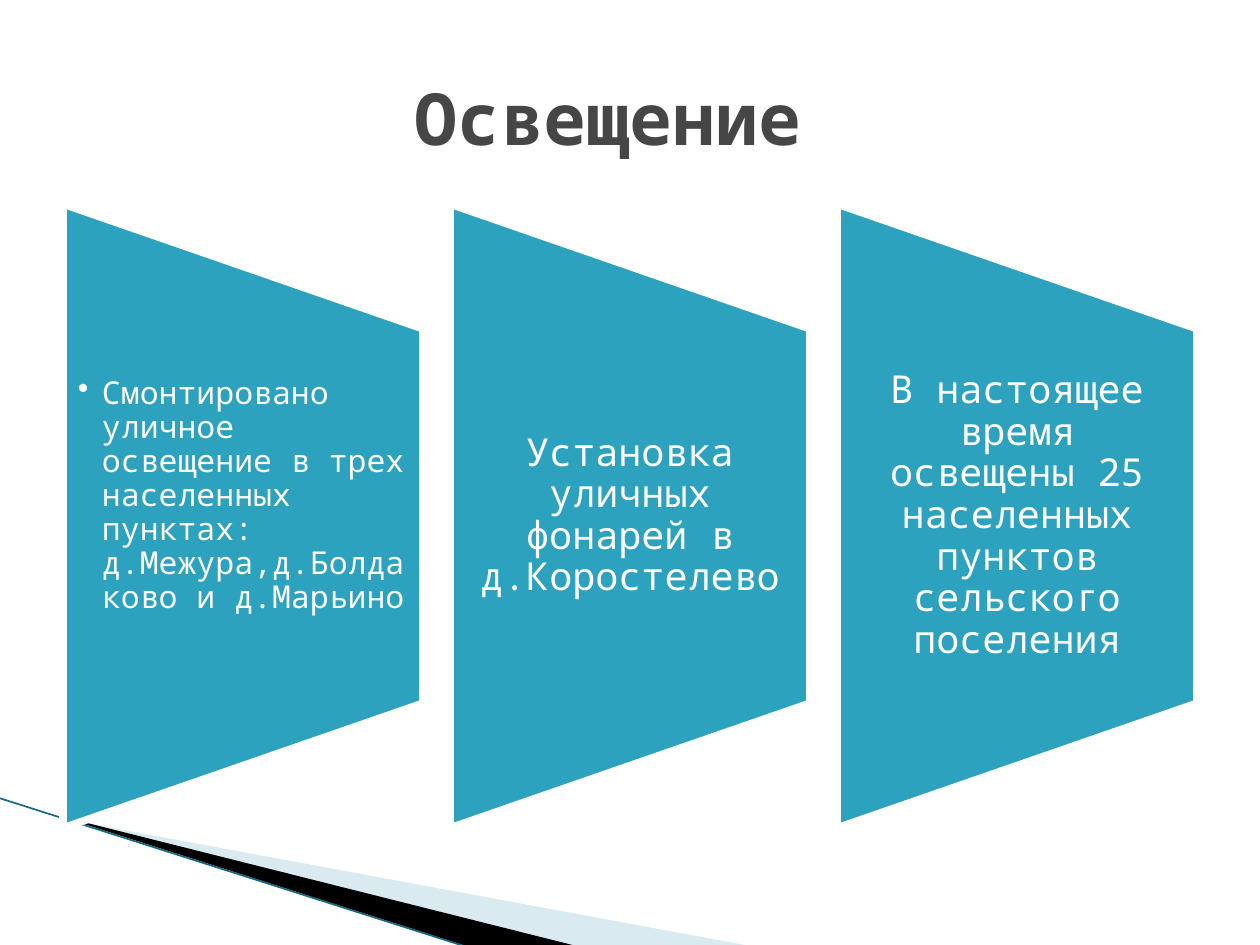
import pptx
import pptx.dml.color
import pptx.enum.shapes
import pptx.enum.text
import pptx.oxml
import pptx.oxml.ns
import pptx.util
from lxml import etree

RGB = pptx.dml.color.RGBColor
TEAL = RGB(0x2D, 0xA2, 0xBF)
DEEP = RGB(0x14, 0x6B, 0x80)
PALE = RGB(0xA0, 0xCB, 0xDC)
BLACK = RGB(0, 0, 0)
WHITE = RGB(0xFF, 0xFF, 0xFF)
GREY = RGB(0x46, 0x46, 0x46)
FONT = "Noto Sans Mono"
SCALE = 914400 / 126
ALIGN = pptx.enum.text.PP_ALIGN
MIDDLE = pptx.enum.text.MSO_ANCHOR.MIDDLE
TOP = pptx.enum.text.MSO_ANCHOR.TOP


def px(*vals):
    return [pptx.util.Emu(round(v * SCALE)) for v in vals]


def write(box, text, size=22, color=WHITE, bold=False, align=ALIGN.CENTER,
          anchor=MIDDLE, inset=None, space=None, bullet=False):
    frame = box.text_frame
    frame.word_wrap = True
    frame.auto_size = pptx.enum.text.MSO_AUTO_SIZE.NONE
    frame.vertical_anchor = anchor
    if inset is not None:
        frame.margin_left, frame.margin_right = px(inset, inset)
        frame.margin_top = frame.margin_bottom = 0
    para = frame.paragraphs[0]
    para.alignment = align
    if space:
        para.line_spacing = space
    if bullet:
        props = para._p.get_or_add_pPr()
        props.set("marL", str(px(24)[0]))
        props.set("indent", str(px(-24)[0]))
        etree.SubElement(props, pptx.oxml.ns.qn("a:buChar"), char="•")
    run = para.add_run()
    run.text = text
    font = run.font
    font.name, font.size, font.bold = FONT, pptx.util.Pt(size), bold
    font.color.rgb = color


deck = pptx.Presentation()
deck.slide_width, deck.slide_height = px(1260, 945)
slide = deck.slides.add_slide(deck.slide_layouts[5])
shapes = slide.shapes

# Corner wedges
wedges = [
    ([(69, 820), (750, 946), (575, 946), (69, 819)], PALE, 40),
    ([(67, 818), (576, 946), (469, 947), (68, 819)], BLACK, 100),
]
for pts, color, alpha in wedges:
    form = shapes.build_freeform(*pts[0], scale=SCALE)
    form.add_line_segments(pts[1:], close=True)
    wedge = form.convert_to_shape()
    wedge.shadow.inherit = False
    wedge.fill.solid()
    wedge.fill.fore_color.rgb = color
    wedge.line.fill.background()
    if alpha < 100:
        tint = wedge._element.spPr.find(".//" + pptx.oxml.ns.qn("a:srgbClr"))
        etree.SubElement(tint, pptx.oxml.ns.qn("a:alpha"), val=str(alpha * 1000))

# Corner line
edge = shapes.add_connector(pptx.enum.shapes.MSO_CONNECTOR.STRAIGHT,
                            *px(-1, 798, 467, 947))
edge.line.color.rgb = DEEP
edge.line.width = pptx.util.Pt(0.95)
etree.SubElement(edge._element.spPr, pptx.oxml.ns.qn("a:effectLst"))

# Three panels, each a trapezoid turned on its side with text over it
panels = [
    ("Смонтировано уличное освещение в трех населенных пунктах: "
     "д.Межура,д.Болдаково и д.Марьино",
     377, 326, dict(size=18, align=ALIGN.LEFT, anchor=TOP, inset=15, bullet=True)),
    ("Установка уличных фонарей в д.Коростелево ", 329, 374, dict(inset=19)),
    ("В настоящее время освещены 25 населенных пунктов сельского поселения",
     329, 374, dict(inset=19)),
]
wide, high, pitch = 624, 360, 387
for i, (text, top, tall, style) in enumerate(panels):
    left = 63 + i * pitch
    panel = shapes.add_shape(
        pptx.enum.shapes.MSO_SHAPE.FLOWCHART_MANUAL_OPERATION,
        *px(left + (high - wide) / 2, 336, wide, high))
    panel.rotation = 270
    panel.shadow.inherit = False
    panel.fill.solid()
    panel.fill.fore_color.rgb = TEAL
    panel.line.color.rgb = WHITE
    panel.line.width = pptx.util.Pt(4.33)
    label = shapes.add_textbox(*px(left, top, high, tall))
    write(label, text, space=0.9, **style)

# Title
title = shapes.title
title.left, title.top, title.width, title.height = px(63, 38, 1134, 158)
write(title, "Освещение ", size=41, color=GREY, bold=True)

deck.save("out.pptx")
